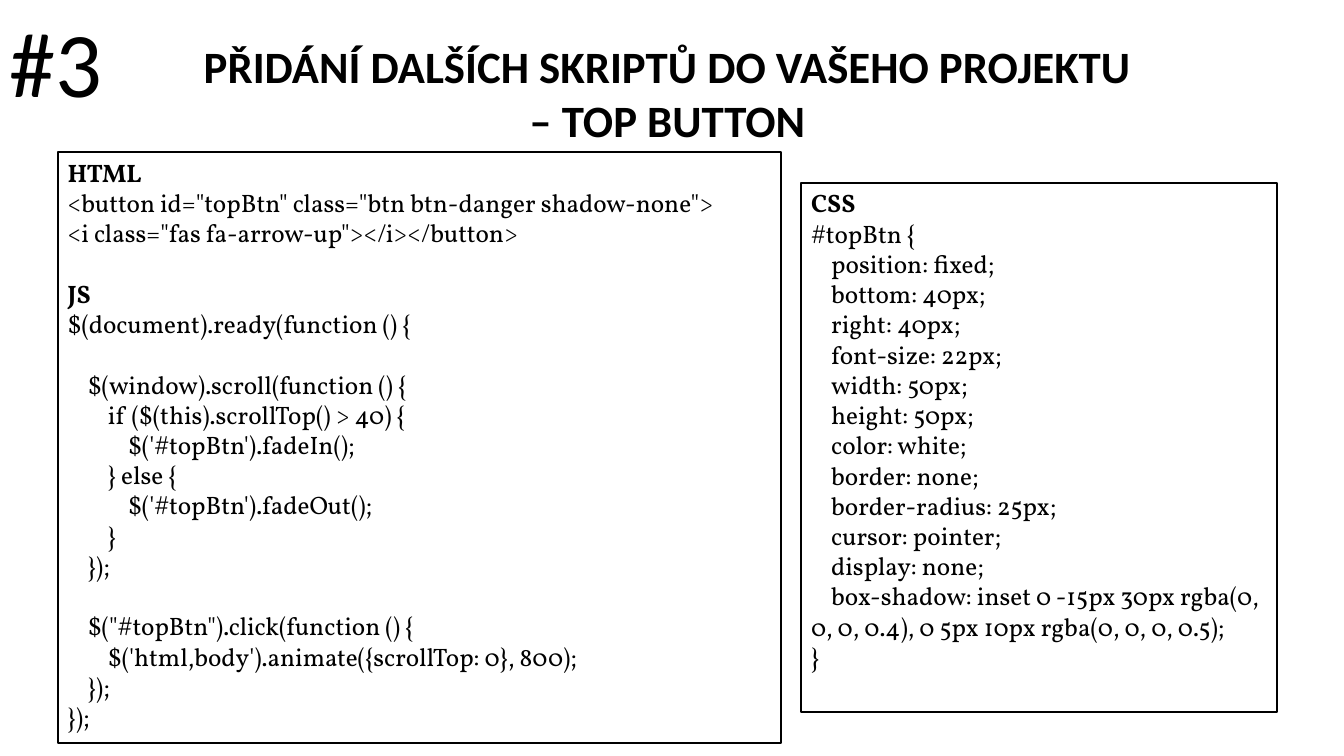
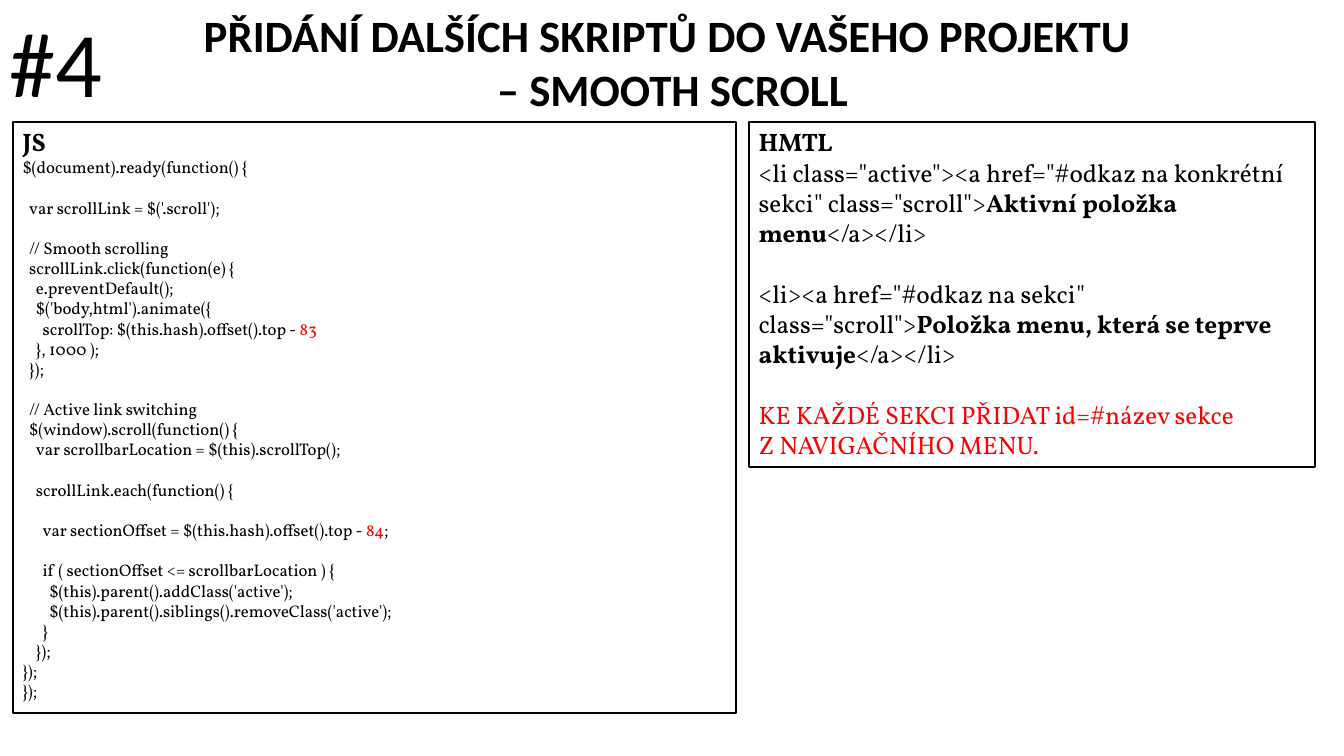
from pptx import Presentation
from pptx.dml.color import RGBColor
from pptx.enum.shapes import MSO_SHAPE
from pptx.enum.text import MSO_ANCHOR, PP_ALIGN
from pptx.util import Emu, Pt

PX = 9525
COLORS = {"ink": "000000", "accent": "FF0000"}
TITLE_FONT, CODE_FONT = "Calibri", "Vollkorn"
TITLE = "PŘIDÁNÍ DALŠÍCH SKRIPTŮ DO VAŠEHO PROJEKTU \v– "
HEADING_SIZE = 18
SPACE_EM, LINE_EM = 0.2, 1.2
BOLD, RED = "**", "~~"

TOP_BUTTON_JS = """HTML
<button id="topBtn" class="btn btn-danger shadow-none">
<i class="fas fa-arrow-up"></i></button>

**JS**
$(document).ready(function () {

    $(window).scroll(function () {
        if ($(this).scrollTop() > 40) {
            $('#topBtn').fadeIn();
        } else {
            $('#topBtn').fadeOut();
        }
    });

    $("#topBtn").click(function () {
        $('html,body').animate({scrollTop: 0}, 800);
    });
});"""

TOP_BUTTON_CSS = """CSS
#topBtn {
    position: fixed;
    bottom: 40px;
    right: 40px;
    font-size: 22px;
    width: 50px;
    height: 50px;
    color: white;
    border: none;
    border-radius: 25px;
    cursor: pointer;
    display: none;
    box-shadow: inset 0 -15px 30px rgba(0, 0, 0, 0.4), 0 5px 10px rgba(0, 0, 0, 0.5);
}"""

SMOOTH_SCROLL_JS = """JS
$(document).ready(function() {

  var scrollLink = $('.scroll');

  // Smooth scrolling
  scrollLink.click(function(e) {
    e.preventDefault();
    $('body,html').animate({
      scrollTop: $(this.hash).offset().top - ~~83~~
    }, 1000 );
  });

  // Active link switching
  $(window).scroll(function() {
    var scrollbarLocation = $(this).scrollTop();

    scrollLink.each(function() {

      var sectionOffset = $(this.hash).offset().top - ~~84~~;

      if ( sectionOffset <= scrollbarLocation ) {
        $(this).parent().addClass('active');
        $(this).parent().siblings().removeClass('active');
      }
    });
});
});"""

SMOOTH_SCROLL_HTML = """HMTL
<li class="active"><a href="#odkaz na konkrétní sekci" class="scroll">**Aktivní položka menu**</a></li>

<li><a href="#odkaz na sekci" class="scroll">**Položka menu, která se teprve aktivuje**</a></li>

~~KE KAŽDÉ SEKCI PŘIDAT id=#název sekce~~
~~Z NAVIGAČNÍHO MENU.~~"""

SLIDES = [
    ("#3", "TOP BUTTON ", 32, [
        ((55, 145, 689, 563), TOP_BUTTON_JS, 18),
        ((763, 174, 453, 504), TOP_BUTTON_CSS, 18),
    ]),
    ("#4", "SMOOTH SCROLL", 3, [
        ((12, 116, 689, 563), SMOOTH_SCROLL_JS, 12),
        ((713, 116, 539, 329), SMOOTH_SCROLL_HTML, 18),
    ]),
]


def emu(box):
    """Turn a box in px into EMU lengths."""
    return [Emu(v * PX) for v in box]


def style(font, name, size, bold=False):
    """Set face, size, weight and the ink colour of a font."""
    font.name, font.size, font.bold = name, Pt(size), bold
    font.color.rgb = RGBColor.from_string(COLORS["ink"])


def add_label(s, box, text, size, bold=False, align=PP_ALIGN.LEFT):
    """Place one paragraph of title type in a box."""
    tf = s.shapes.add_textbox(*emu(box)).text_frame
    tf.word_wrap = True
    p = tf.paragraphs[0]
    p.text, p.alignment = text, align
    style(p.font, TITLE_FONT, size, bold)


def add_runs(p, text):
    """Write a line, with marked parts in bold or in the accent colour."""
    for i, chunk in enumerate(text.split(BOLD)):
        for j, part in enumerate(chunk.split(RED)):
            if not part:
                continue
            r = p.add_run()
            r.text = part
            if i % 2:
                r.font.bold = True
            if j % 2:
                r.font.color.rgb = RGBColor.from_string(COLORS["accent"])


def add_code(s, box, code, size):
    """Place an outlined box with a heading line and code below it."""
    sp = s.shapes.add_shape(MSO_SHAPE.RECTANGLE, *emu(box))
    sp.shadow.inherit = False
    sp.fill.background()
    sp.line.color.rgb = RGBColor.from_string(COLORS["ink"])
    sp.line.width = Pt(1.5)
    tf = sp.text_frame
    tf.word_wrap, tf.vertical_anchor = True, MSO_ANCHOR.TOP
    heading, *lines = code.split("\n")
    p = tf.paragraphs[0]
    p.text, p.alignment = heading, PP_ALIGN.LEFT
    style(p.font, CODE_FONT, HEADING_SIZE, True)
    gap = 0
    for line in lines:
        if not line:
            gap = LINE_EM * size
            continue
        p = tf.add_paragraph()
        p.alignment, p.space_before = PP_ALIGN.LEFT, Pt(gap)
        style(p.font, CODE_FONT, size)
        text = line.lstrip()
        indent = Pt((len(line) - len(text)) * SPACE_EM * size)
        ppr = p._p.get_or_add_pPr()
        ppr.set("marL", "0")
        ppr.set("indent", str(indent))
        add_runs(p, text)
        gap = 0


def add_script_slide(prs, number, topic, title_top, panels):
    """Build a slide with its number, title and code panels."""
    s = prs.slides.add_slide(prs.slide_layouts[6])
    add_label(s, (0, 0, 109, 116), number, 66)
    add_label(s, (143, title_top, 995, 113), TITLE + topic, 32, True, PP_ALIGN.CENTER)
    for box, code, size in panels:
        add_code(s, box, code, size)


def main():
    """Build and save the presentation."""
    prs = Presentation()
    prs.slide_width, prs.slide_height = emu((1280, 720))
    for content in SLIDES:
        add_script_slide(prs, *content)
    prs.save("out.pptx")


if __name__ == "__main__":
    main()
